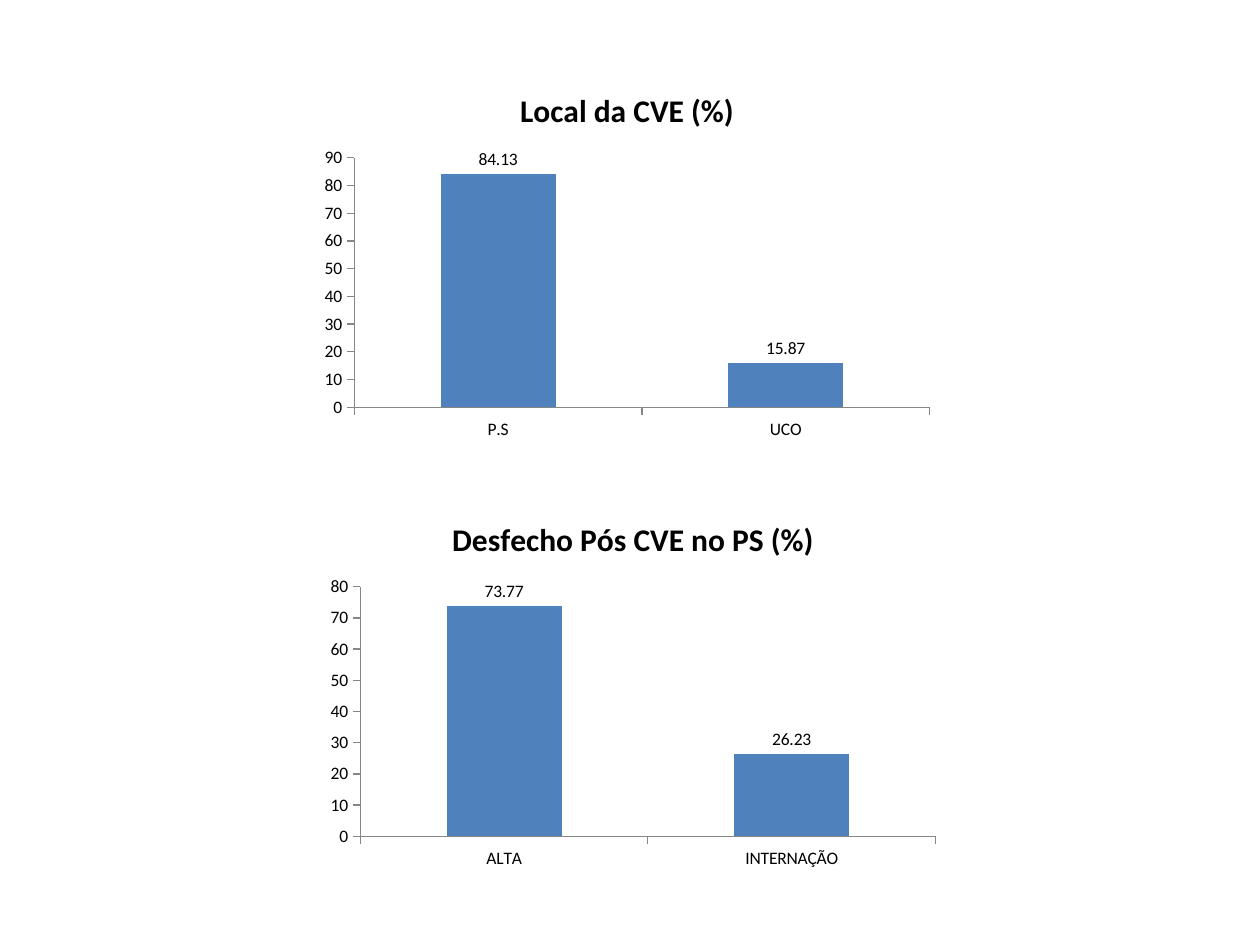
from dataclasses import dataclass

from pptx import Presentation
from pptx.chart.data import CategoryChartData
from pptx.dml.color import RGBColor
from pptx.enum.chart import XL_CHART_TYPE, XL_LABEL_POSITION, XL_TICK_MARK
from pptx.util import Pt

COLUMN = XL_CHART_TYPE.COLUMN_CLUSTERED
OUTSIDE_END = XL_LABEL_POSITION.OUTSIDE_END
TICK_OUT = XL_TICK_MARK.OUTSIDE
TICK_NONE = XL_TICK_MARK.NONE


@dataclass(frozen=True)
class Theme:
    font: str = "Calibri"
    text: RGBColor = RGBColor(0x00, 0x00, 0x00)
    bar: RGBColor = RGBColor(0x4F, 0x81, 0xBD)
    axis: RGBColor = RGBColor(0x86, 0x86, 0x86)
    title_size: Pt = Pt(18)
    body_size: Pt = Pt(10)
    axis_width: Pt = Pt(0.75)


THEME = Theme()
SLIDE_SIZE = (1260, 945)
CHART_SIZE = (630, 378)
CHARTS = [
    {
        "title": "Local da CVE (%)",
        "position": (312, 69),
        "shares": {"P.S": 84.13, "UCO": 15.87},
        "maximum": 90,
    },
    {
        "title": "Desfecho Pós CVE no PS (%)",
        "position": (318, 498),
        "shares": {"ALTA": 73.77, "INTERNAÇÃO": 26.23},
        "maximum": 80,
    },
]


def px(length):
    return round(length * 914400 / 126)


def style_font(font, size, bold=False):
    font.name = THEME.font
    font.size = size
    font.bold = bold
    font.color.rgb = THEME.text


def style_axis(axis):
    axis.has_major_gridlines = False
    axis.major_tick_mark = TICK_OUT
    axis.minor_tick_mark = TICK_NONE
    axis.format.line.color.rgb = THEME.axis
    axis.format.line.width = THEME.axis_width


def add_share_chart(slide, content):
    data = CategoryChartData()
    data.categories = list(content["shares"])
    data.add_series("Series 1", list(content["shares"].values()))
    bounds = [px(length) for length in content["position"] + CHART_SIZE]
    chart = slide.shapes.add_chart(COLUMN, *bounds, data).chart
    style_font(chart.font, THEME.body_size)
    chart.has_legend = False

    chart.has_title = True
    heading = chart.chart_title.text_frame
    heading.text = content["title"]
    style_font(heading.paragraphs[0].font, THEME.title_size, bold=True)
    chart.chart_title.include_in_layout = False

    style_axis(chart.category_axis)
    style_axis(chart.value_axis)
    chart.value_axis.minimum_scale = 0
    chart.value_axis.maximum_scale = content["maximum"]
    chart.value_axis.major_unit = 10

    plot = chart.plots[0]
    plot.gap_width = 150
    plot.vary_by_categories = False
    shares = plot.series[0]
    shares.format.fill.solid()
    shares.format.fill.fore_color.rgb = THEME.bar
    labels = shares.data_labels
    labels.show_value = True
    labels.position = OUTSIDE_END
    style_font(labels.font, THEME.body_size)


def main():
    presentation = Presentation()
    presentation.slide_width, presentation.slide_height = map(px, SLIDE_SIZE)
    slide = presentation.slides.add_slide(presentation.slide_layouts[6])
    for content in CHARTS:
        add_share_chart(slide, content)
    presentation.save("out.pptx")


if __name__ == "__main__":
    main()
